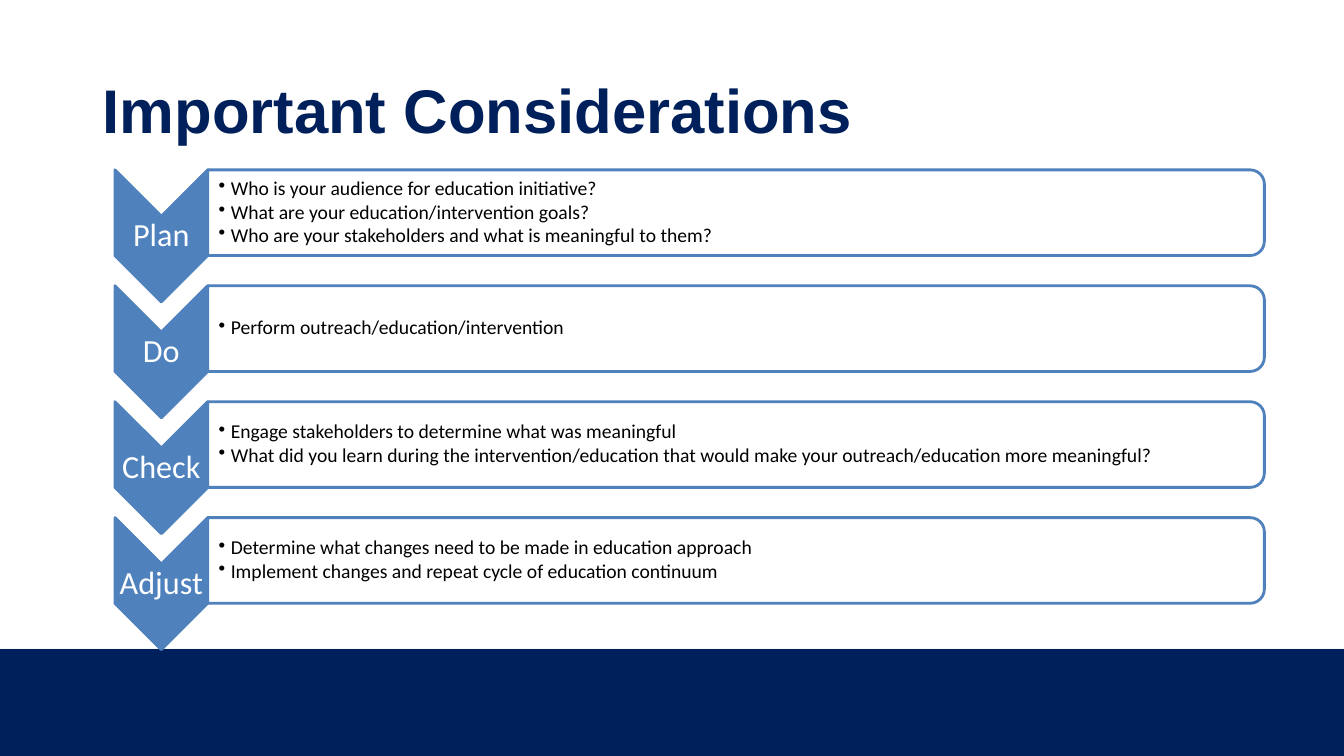
from lxml import etree
from pptx import Presentation
from pptx import util as u
from pptx.dml.color import RGBColor
from pptx.enum import shapes, text
from pptx.oxml.ns import qn

NAVY = RGBColor(0x00, 0x20, 0x5B)
BLUE = RGBColor(0x4F, 0x81, 0xBD)
PALE = RGBColor(0xF8, 0xF8, 0xF8)
WHITE = RGBColor(0xFF, 0xFF, 0xFF)
BLACK = RGBColor(0x00, 0x00, 0x00)

WIDTH, HEIGHT = 13.33, 7.5
FOOTER_TOP = 6.44

# Grid of the cycle: one row per step, a chevron column and a panel column
ROW_TOP, ROW_PITCH = 1.685, 1.15
CHEVRON_LEFT, CHEVRON_WIDTH, CHEVRON_HEIGHT = 1.14, 0.92, 1.31
PANEL_LEFT = CHEVRON_LEFT + CHEVRON_WIDTH
PANEL_WIDTH, PANEL_HEIGHT = 10.48, 0.85
CHEVRON_DEPTH = CHEVRON_WIDTH / 2
LIST_INSET = 0.04
BULLET_INDENT = 0.12

STEPS = [
    ("Plan", ["Who is your audience for education initiative?",
              "What are your education/intervention goals?",
              "Who are your stakeholders and what is meaningful to them?"]),
    ("Do", ["Perform outreach/education/intervention"]),
    ("Check", ["Engage stakeholders to determine what was meaningful",
               "What did you learn during the intervention/education that would "
               "make your outreach/education more meaningful?"]),
    ("Adjust", ["Determine what changes need to be made in education approach",
                "Implement changes and repeat cycle of education continuum"]),
]


def add_filled(slide, kind, left, top, width, height, fill, line=None):
    shape = slide.shapes.add_shape(
        kind, u.Inches(left), u.Inches(top), u.Inches(width), u.Inches(height))
    shape.shadow.inherit = False
    shape.fill.solid()
    shape.fill.fore_color.rgb = fill
    if line is None:
        shape.line.fill.background()
    else:
        shape.line.color.rgb = line
        shape.line.width = u.Pt(2)
    return shape


def add_quarter_turned(slide, kind, left, top, width, height, fill):
    """Add a shape turned by 90 degrees that shows in the given box."""
    shift = (width - height) / 2
    shape = add_filled(slide, kind, left + shift, top - shift, height, width, fill, BLUE)
    shape.rotation = 90
    return shape


def set_opacity(shape, percent):
    color = shape.fill._xPr.find(qn("a:solidFill"))[0]
    etree.SubElement(color, qn("a:alpha")).set("val", str(percent * 1000))


def add_bullet(paragraph):
    properties = paragraph._p.get_or_add_pPr()
    indent = u.Inches(BULLET_INDENT)
    properties.set("marL", str(indent))
    properties.set("indent", str(-indent))
    etree.SubElement(properties, qn("a:buChar")).set("char", "•")


def add_text(slide, left, top, width, height, lines, size, color, font="Calibri",
             insets=(0.02, 0.02), bold=False, centered=False, bulleted=False, space_after=0):
    """Add a text box; insets are the left one and the one for the other sides."""
    box = slide.shapes.add_textbox(
        u.Inches(left), u.Inches(top), u.Inches(width), u.Inches(height))
    frame = box.text_frame
    frame.word_wrap = True
    frame.vertical_anchor = text.MSO_ANCHOR.MIDDLE
    frame.margin_left = u.Inches(insets[0])
    frame.margin_right = frame.margin_top = frame.margin_bottom = u.Inches(insets[1])
    for index, line in enumerate(lines):
        paragraph = frame.add_paragraph() if index else frame.paragraphs[0]
        paragraph.line_spacing = 0.9
        paragraph.space_after = u.Pt(space_after)
        if centered:
            paragraph.alignment = text.PP_ALIGN.CENTER
        if bulleted:
            add_bullet(paragraph)
        run = paragraph.add_run()
        run.text = line
        run.font.name = font
        run.font.size = u.Pt(size)
        run.font.bold = bold
        run.font.color.rgb = color


def add_step(slide, row, label, points):
    top = ROW_TOP + row * ROW_PITCH
    add_quarter_turned(slide, shapes.MSO_SHAPE.CHEVRON, CHEVRON_LEFT, top,
                       CHEVRON_WIDTH, CHEVRON_HEIGHT, BLUE)
    add_text(slide, CHEVRON_LEFT, top + CHEVRON_DEPTH, CHEVRON_WIDTH,
             CHEVRON_HEIGHT - 2 * CHEVRON_DEPTH, [label], 23, WHITE, centered=True)
    panel = add_quarter_turned(slide, shapes.MSO_SHAPE.ROUND_2_SAME_RECTANGLE, PANEL_LEFT, top,
                               PANEL_WIDTH, PANEL_HEIGHT, WHITE)
    set_opacity(panel, 90)
    add_text(slide, PANEL_LEFT, top + LIST_INSET, PANEL_WIDTH - LIST_INSET,
             PANEL_HEIGHT - 2 * LIST_INSET, points, 14, BLACK,
             insets=(0.11, 0.01), bulleted=True, space_after=1.8)


def main():
    presentation = Presentation()
    presentation.slide_width = u.Inches(WIDTH)
    presentation.slide_height = u.Inches(HEIGHT)
    slide = presentation.slides.add_slide(presentation.slide_layouts[6])
    for top, color in ((FOOTER_TOP - 0.01, PALE), (FOOTER_TOP, NAVY)):
        add_filled(slide, shapes.MSO_SHAPE.RECTANGLE, 0, top, WIDTH, HEIGHT - top, color)
    add_text(slide, 0.92, 0.4, 11.5, 1.45, ["Important Considerations"], 44, NAVY,
             font="Arial", insets=(0.1, 0.05), bold=True)
    for row, (label, points) in enumerate(STEPS):
        add_step(slide, row, label, points)
    presentation.save("out.pptx")


if __name__ == "__main__":
    main()
